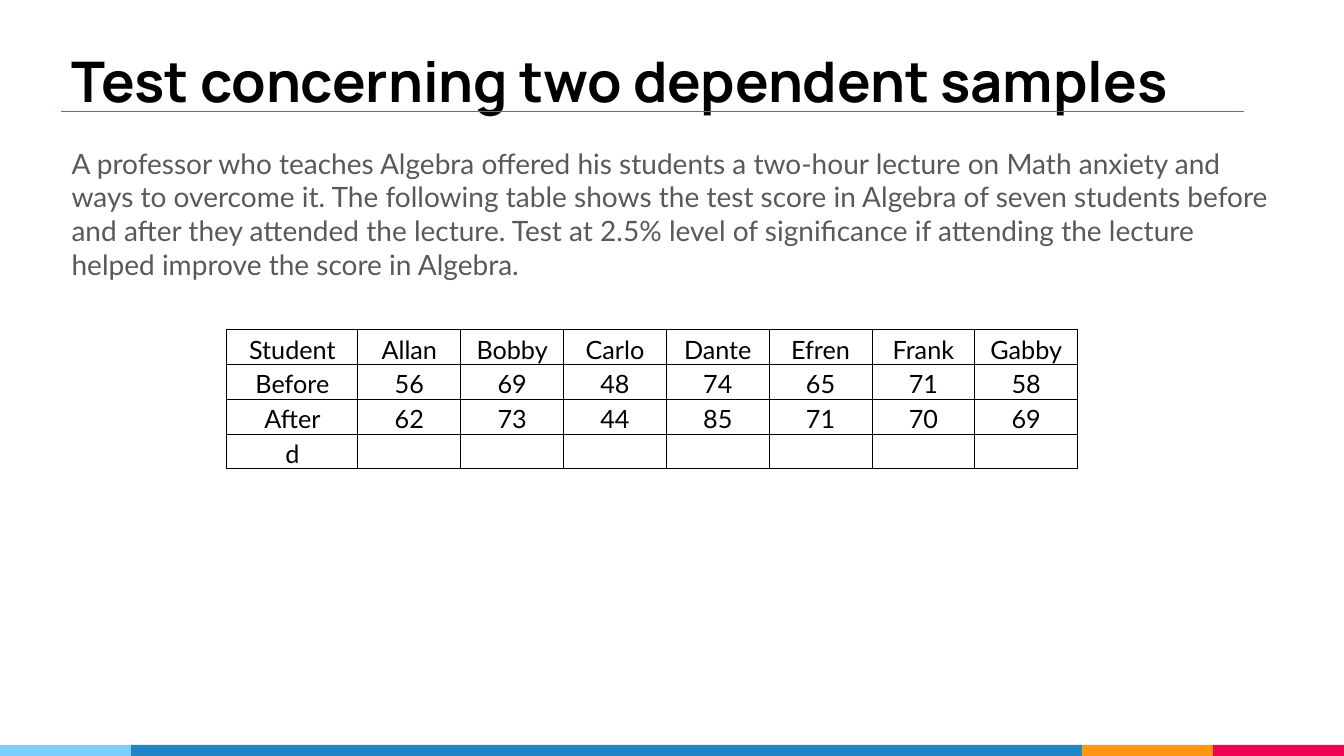
import pptx
import pptx.util
import pptx.dml.color
import pptx.enum.shapes
import pptx.enum.text
import pptx.oxml
import pptx.oxml.ns
from dataclasses import dataclass

TITLE = "Test concerning two dependent samples"
PROBLEM = (
    "A professor who teaches Algebra offered his students a two-hour lecture on Math "
    "anxiety and ways to overcome it. The following table shows the test score in Algebra "
    "of seven students before and after they attended the lecture. Test at 2.5% level of "
    "significance if attending the lecture helped improve the score in Algebra."
)
SCORES = [
    ["Student", "Allan", "Bobby", "Carlo", "Dante", "Efren", "Frank", "Gabby"],
    ["Before", "56", "69", "48", "74", "65", "71", "58"],
    ["After", "62", "73", "44", "85", "71", "70", "69"],
    ["d", "", "", "", "", "", "", ""],
]
STRIPE = [("7ECEFD", 1.3), ("2185C5", 9.43), ("FF9715", 1.3), ("F20253", 1.3)]


@dataclass(frozen=True)
class Theme:
    heading_font: str = "Manrope"
    text_font: str = "Lato"
    ink: str = "000000"
    muted: str = "595959"
    rule: str = "367EB9"
    title_size: int = 40
    body_size: int = 20
    table_size: int = 18
    line_width: float = 0.75


THEME = Theme()
WIDTH, HEIGHT = 13.33, 7.5
LEFT = 0.61
STRIPE_HEIGHT = 0.11
TABLE_LEFT, TABLE_TOP = 2.25, 3.27
LABEL_WIDTH, SCORE_WIDTH, ROW_HEIGHT = 1.3, 1.02, 0.345
Inches = pptx.util.Inches


def color(value):
    return pptx.dml.color.RGBColor.from_string(value)


def add_span(para, text, font, size, ink, bold=False):
    span = para.add_run()
    span.text = text
    span.font.name = font
    span.font.size = pptx.util.Pt(size)
    span.font.color.rgb = color(ink)
    span.font.bold = bold


def place_text(box, bounds, anchor, text, font, size, ink, bold=False):
    box.left, box.top, box.width, box.height = map(Inches, bounds)
    frame = box.text_frame
    frame.word_wrap = True
    frame.auto_size = pptx.enum.text.MSO_AUTO_SIZE.NONE
    frame.vertical_anchor = anchor
    frame.margin_left = frame.margin_right = Inches(0.1)
    frame.margin_top = frame.margin_bottom = Inches(0.1)
    para = frame.paragraphs[0]
    para.alignment = pptx.enum.text.PP_ALIGN.LEFT
    para.space_before = pptx.util.Pt(0)
    add_span(para, text, font, size, ink, bold)
    return para


def remove_bullet(para):
    properties = para._p.get_or_add_pPr()
    properties.set("marL", "0")
    properties.set("indent", "0")
    properties.append(pptx.oxml.parse_xml(
        f'<a:buNone {pptx.oxml.ns.nsdecls("a")}/>'))


def add_borders(cell):
    properties = cell._tc.get_or_add_tcPr()
    width = pptx.util.Pt(THEME.line_width)
    for index, side in enumerate(("lnL", "lnR", "lnT", "lnB")):
        properties.insert(index, pptx.oxml.parse_xml(
            f'<a:{side} {pptx.oxml.ns.nsdecls("a")} w="{width}"><a:solidFill>'
            f'<a:srgbClr val="{THEME.ink}"/></a:solidFill></a:{side}>'))


def add_stripe(page):
    left = 0
    for fill, width in STRIPE:
        band = page.shapes.add_shape(
            pptx.enum.shapes.MSO_SHAPE.RECTANGLE, Inches(left),
            Inches(HEIGHT - STRIPE_HEIGHT), Inches(width), Inches(STRIPE_HEIGHT))
        band.shadow.inherit = False
        band.fill.solid()
        band.fill.fore_color.rgb = color(fill)
        band.line.fill.background()
        left += width


def add_rule(page):
    rule = page.shapes.add_connector(
        pptx.enum.shapes.MSO_CONNECTOR.STRAIGHT,
        Inches(LEFT), Inches(1.11), Inches(12.34), Inches(1.11))
    rule.line.color.rgb = color(THEME.rule)
    rule.line.width = pptx.util.Pt(THEME.line_width)
    rule._element.spPr.append(pptx.oxml.parse_xml(
        f'<a:effectLst {pptx.oxml.ns.nsdecls("a")}/>'))


def add_scores(page):
    widths = [LABEL_WIDTH] + [SCORE_WIDTH] * (len(SCORES[0]) - 1)
    table = page.shapes.add_table(
        len(SCORES), len(widths), Inches(TABLE_LEFT), Inches(TABLE_TOP),
        Inches(sum(widths)), Inches(ROW_HEIGHT * len(SCORES))).table
    table.first_row = table.horz_banding = False
    for column, width in zip(table.columns, widths):
        column.width = Inches(width)
    for row, values in zip(table.rows, SCORES):
        row.height = Inches(ROW_HEIGHT)
        for cell, value in zip(row.cells, values):
            cell.margin_left = cell.margin_right = Inches(0.07)
            cell.margin_top = cell.margin_bottom = 0
            cell.fill.background()
            add_borders(cell)
            para = cell.text_frame.paragraphs[0]
            para.alignment = pptx.enum.text.PP_ALIGN.CENTER
            para.line_spacing = 1.15
            if value:
                add_span(para, value, THEME.text_font, THEME.table_size, THEME.ink)


def main():
    deck = pptx.Presentation()
    deck.slide_width, deck.slide_height = Inches(WIDTH), Inches(HEIGHT)
    page = deck.slides.add_slide(deck.slide_layouts[1])
    anchors = pptx.enum.text.MSO_ANCHOR
    add_stripe(page)
    add_rule(page)
    place_text(page.shapes.title, (LEFT, 0.35, 11.74, 0.88), anchors.BOTTOM,
               TITLE, THEME.heading_font, THEME.title_size, THEME.ink, True)
    problem = place_text(page.placeholders[1], (LEFT, 1.35, 12.13, 1.57), anchors.TOP,
                         PROBLEM, THEME.text_font, THEME.body_size, THEME.muted)
    remove_bullet(problem)
    add_scores(page)
    deck.save("out.pptx")


if __name__ == "__main__":
    main()
